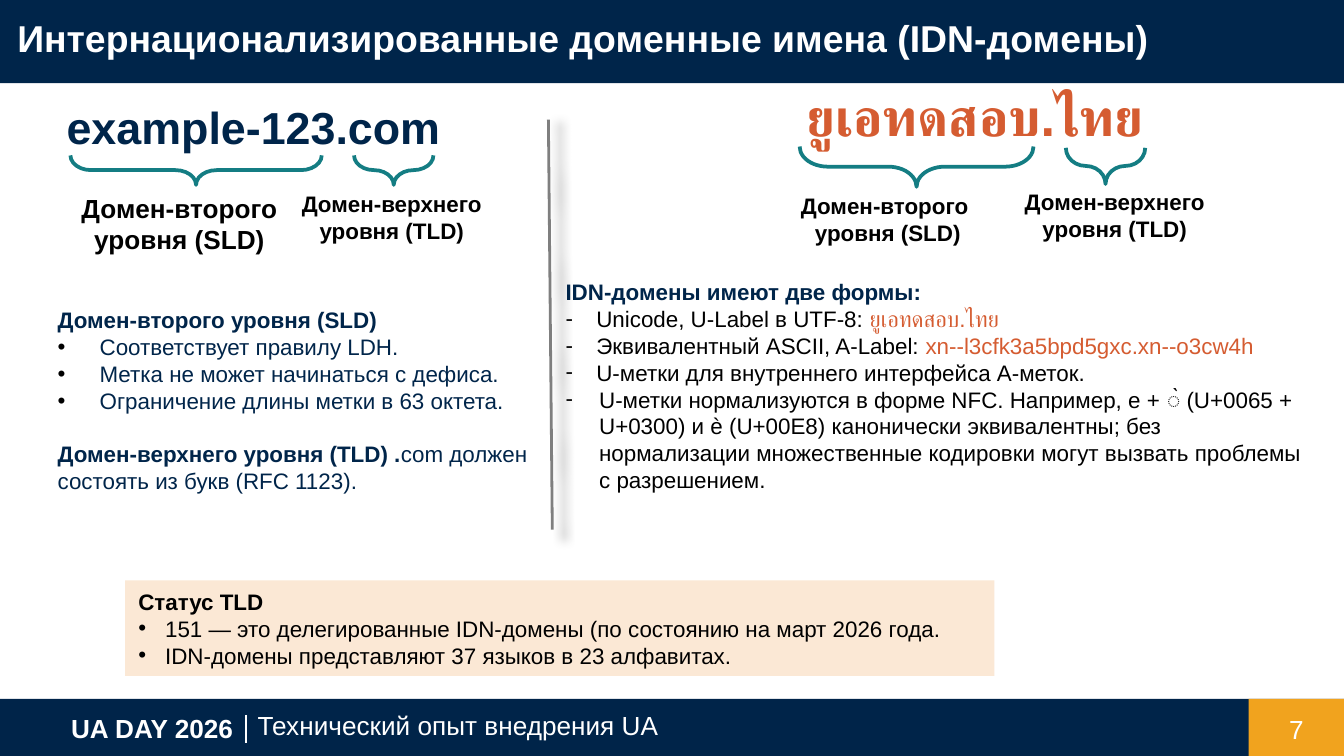
from dataclasses import dataclass

import lxml.etree
import pptx
import pptx.dml.color
import pptx.enum.shapes
import pptx.enum.text
import pptx.oxml
import pptx.oxml.ns
import pptx.util

Pt = pptx.util.Pt
qn = pptx.oxml.ns.qn
SHAPES = pptx.enum.shapes.MSO_SHAPE
ALIGN = pptx.enum.text.PP_ALIGN
ANCHOR = pptx.enum.text.MSO_ANCHOR


@dataclass(frozen=True)
class Theme:
    font: str = "Arial"
    navy: str = "00254A"
    footer_navy: str = "002449"
    amber: str = "F1A31E"
    orange: str = "D55C31"
    teal: str = "147D83"
    cream: str = "FBE8D5"
    grey: str = "7F7F7F"
    black: str = "000000"
    white: str = "FFFFFF"
    title: int = 20
    domain: int = 24
    thai_domain: int = 28
    footer: int = 14
    body: int = 12


THEME = Theme()


@dataclass
class Para:
    """Runs are (text, overrides) pairs; a plain string is a single run."""
    runs: object
    size: int = THEME.body
    color: str = THEME.black
    bold: bool = False
    bullet: str = ""
    margin: float = 0
    hanging: float = 0
    align: object = ALIGN.LEFT
    spacing: float = 1
    before: float = 0


def rgb(value):
    return pptx.dml.color.RGBColor.from_string(value)


def add_bullet(paragraph, item):
    props = paragraph._p.get_or_add_pPr()
    props.set("marL", str(Pt(item.margin)))
    props.set("indent", str(-Pt(item.hanging)))
    color = lxml.etree.SubElement(props, qn("a:buClr"))
    lxml.etree.SubElement(color, qn("a:srgbClr"), val=THEME.black)
    lxml.etree.SubElement(props, qn("a:buFont"), typeface=THEME.font)
    lxml.etree.SubElement(props, qn("a:buChar"), char=item.bullet)


def write(frame, items, inset=7.2, anchor=ANCHOR.TOP):
    frame.word_wrap = True
    frame.vertical_anchor = anchor
    frame.margin_left = frame.margin_right = Pt(7.2)
    frame.margin_top = frame.margin_bottom = Pt(inset)
    for index, item in enumerate(items):
        paragraph = frame.paragraphs[0] if index == 0 else frame.add_paragraph()
        paragraph.alignment = item.align
        if item.spacing != 1:
            paragraph.line_spacing = item.spacing
        if item.before:
            paragraph.space_before = Pt(item.before)
        if item.bullet:
            add_bullet(paragraph, item)
        font = paragraph.font
        font.name, font.size, font.bold = THEME.font, Pt(item.size), item.bold
        font.color.rgb = rgb(item.color)
        if isinstance(item.runs, str):
            paragraph.text = item.runs
            continue
        for text, changes in item.runs:
            run = paragraph.add_run()
            run.text = text
            if "bold" in changes:
                run.font.bold = changes["bold"]
            if "color" in changes:
                run.font.color.rgb = rgb(changes["color"])


def add_text(slide, box, *items, **options):
    write(slide.shapes.add_textbox(*map(Pt, box)).text_frame, items, **options)


def add_panel(slide, box, color):
    panel = slide.shapes.add_shape(SHAPES.RECTANGLE, *map(Pt, box))
    panel.shadow.inherit = False
    panel.fill.solid()
    panel.fill.fore_color.rgb = rgb(color)
    panel.line.fill.background()
    return panel


def add_brace(slide, left, top, span, depth):
    """Brace that opens upwards over the given visible area."""
    frame = (left + (span - depth) / 2, top + (depth - span) / 2, depth, span)
    brace = slide.shapes.add_shape(SHAPES.LEFT_BRACE, *map(Pt, frame))
    brace.rotation = 270
    brace.adjustments[0], brace.adjustments[1] = 0.7, 0.5
    brace.shadow.inherit = False
    brace.fill.background()
    brace.line.color.rgb = rgb(THEME.teal)
    brace.line.width = Pt(2)


def add_line(slide, ends, color, shadow=False):
    line = slide.shapes.add_connector(
        pptx.enum.shapes.MSO_CONNECTOR.STRAIGHT, *map(Pt, ends))
    line.line.color.rgb = rgb(color)
    line.line.width = Pt(1.5)
    effects = lxml.etree.SubElement(line._element.spPr, qn("a:effectLst"))
    if shadow:
        outer = lxml.etree.SubElement(
            effects, qn("a:outerShdw"), blurRad=str(Pt(5)),
            sx="102000", sy="102000", algn="ctr", rotWithShape="0")
        tint = lxml.etree.SubElement(outer, qn("a:srgbClr"), val=THEME.black)
        lxml.etree.SubElement(tint, qn("a:alpha"), val="40000")


def add_frame(slide):
    add_panel(slide, (0, 374.4, 720, 30.6), THEME.footer_navy)
    add_panel(slide, (668.9, 374.4, 51.1, 30.6), THEME.amber)
    add_panel(slide, (0, 0, 720, 44.6), THEME.navy)
    footer = {"size": THEME.footer, "color": THEME.white}
    add_text(slide, (668.9, 375.1, 51.1, 31), Para("7", align=ALIGN.CENTER, **footer),
             anchor=ANCHOR.MIDDLE)
    add_text(slide, (131, 378.7, 542.9, 26.6),
             Para("Технический опыт внедрения UA", spacing=0.7, **footer))
    add_line(slide, (131.8, 383, 131.8, 398.2), THEME.white)
    add_text(slide, (31, 374.4, 110.9, 31.7), Para("UA DAY 2026", bold=True, **footer))
    add_text(slide, (2.2, 0.7, 688.3, 38.9),
             Para("Интернационализированные доменные имена (IDN-домены)",
                  THEME.title, THEME.white, True))


def add_domain(slide, box, name, size, color):
    add_text(slide, box, Para(name, size, color, True, align=ALIGN.CENTER, spacing=0.8))


def add_label(slide, box, text, size=THEME.body):
    add_text(slide, box, Para(text, size, bold=True, align=ALIGN.CENTER), inset=3.6)


def add_ascii_side(slide):
    add_domain(slide, (-25.9, 51.8, 323.3, 41.8), "example-123.com",
               THEME.domain, THEME.navy)
    dot = {"color": THEME.navy, "bullet": "•", "margin": 22.5, "hanging": 22.5}
    add_text(
        slide, (23.8, 157, 273.6, 144.7),
        Para("Домен-второго уровня (SLD)", color=THEME.navy, bold=True),
        Para("Соответствует правилу LDH.", **dot),
        Para("Метка не может начинаться с дефиса.", **dot),
        Para("Ограничение длины метки в 63 октета.", **dot),
        Para([("Домен-верхнего уровня (TLD) .", {"bold": True}),
              ("com должен состоять из букв (RFC 1123).", {})],
             color=THEME.navy, before=14))
    add_brace(slide, 37.8, 83.2, 134.6, 15.8)
    add_brace(slide, 189.7, 83.2, 42.5, 15.8)
    add_label(slide, (146.9, 98.6, 126, 36), "Домен-верхнего уровня (TLD)")
    add_label(slide, (33.1, 99.4, 126, 41), "Домен-второго уровня (SLD)", THEME.footer)


def add_idn_side(slide):
    thai_name = "ยูเอทดสอบ.ไทย"
    accent = {"color": THEME.orange}
    add_domain(slide, (360.7, 44.6, 323.3, 41.8), thai_name,
               THEME.thai_domain, THEME.orange)
    dash = {"bullet": "-", "margin": 16.5, "hanging": 16.5}
    add_text(
        slide, (295.9, 141.8, 413.3, 180.7),
        Para("IDN-домены имеют две формы:", color=THEME.navy, bold=True),
        Para([("Unicode, U-Label в UTF-8: ", {}), (thai_name, accent)], **dash),
        Para([("Эквивалентный ASCII, A-Label: ", {}),
              ("xn--l3cfk3a5bpd5gxc.xn--o3cw4h", accent)], **dash),
        Para("U-метки для внутреннего интерфейса A-меток.", **dash),
        Para("U-метки нормализуются в форме NFC. Например, e + ◌̀ (U+0065 + U+0300) "
             "и è (U+00E8) канонически эквивалентны; без нормализации множественные "
             "кодировки могут вызвать проблемы с разрешением.",
             bullet="-", margin=18, hanging=18))
    add_brace(slide, 428.4, 78.5, 125.3, 21.6)
    add_brace(slide, 571, 79.2, 42.5, 19.4)
    add_label(slide, (534.2, 97.2, 126, 36), "Домен-верхнего уровня (TLD)")
    add_label(slide, (398.2, 99.4, 154.8, 36), "Домен-второго \nуровня (SLD)")


def add_status(slide):
    panel = add_panel(slide, (67, 311, 465.8, 51.1), THEME.cream)
    dot = {"bullet": "•", "margin": 14.4, "hanging": 14.4}
    write(panel.text_frame, [
        Para("Статус TLD", bold=True),
        Para("151 — это делегированные IDN-домены (по состоянию на март 2026 года.", **dot),
        Para("IDN-домены представляют 37 языков в 23 алфавитах.", **dot),
    ], inset=3.6, anchor=ANCHOR.MIDDLE)


def main():
    deck = pptx.Presentation()
    deck.slide_width, deck.slide_height = Pt(720), Pt(405)
    slide = deck.slides.add_slide(deck.slide_layouts[6])
    # Title bar and footer
    add_frame(slide)
    # Two kinds of domain name, side by side
    add_ascii_side(slide)
    add_line(slide, (293.8, 64.1, 295.9, 283.7), THEME.grey, shadow=True)
    add_idn_side(slide)
    # Status box
    add_status(slide)
    deck.save("out.pptx")


if __name__ == "__main__":
    main()
